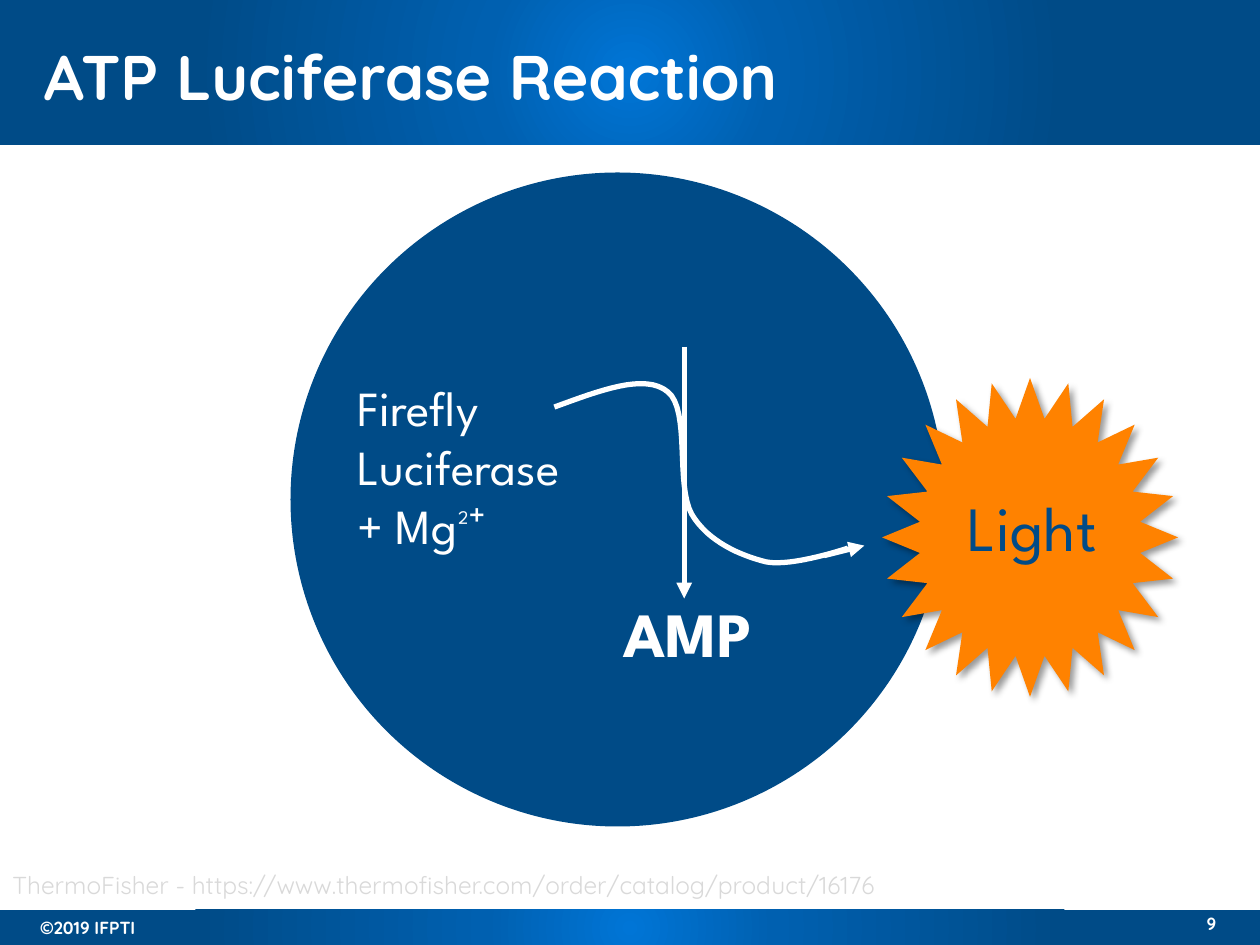
from dataclasses import dataclass

from lxml import etree
from pptx import Presentation
from pptx.dml.color import RGBColor
from pptx.enum import shapes as s, text as t
from pptx.oxml import ns, parse_xml
from pptx.util import Pt


@dataclass(frozen=True)
class Theme:
    """Colours, fonts and type sizes of the slide."""
    navy: str = "004B87"
    white: str = "FFFFFF"
    gray: str = "D9D9D9"
    orange: str = "FF8200"
    glow: tuple = ((0, "0075D6"), (23, "0060B0"), (69, "004B87"), (97, "004B87"))
    sans: str = "Quicksand"
    round: str = "League Spartan"
    tiny: int = 10
    small: int = 14
    body: int = 28
    big: int = 36
    stroke: int = 3


TH = Theme()
NS = f'xmlns:a="{ns.nsuri("a")}"'
CURVE = [
    (150.8, 134), (176.7, 124.6), (202.6, 114.5), (215.6, 125.3),
    (228.6, 135.4), (219.9, 178.6), (229.3, 195.2),
    (238.6, 211), (257.4, 218.9), (271.8, 222.5),
    (286.9, 225.4), (318.6, 214.6), (318.6, 214.6),
]


def rgb(code):
    """Turn a hex code into a colour."""
    return RGBColor.from_string(code)


def write(slide, box, lines, size, color, font, bold=False,
          align=t.PP_ALIGN.LEFT, anchor=t.MSO_ANCHOR.TOP):
    """Add a text box with one paragraph for each line."""
    frame = slide.shapes.add_textbox(*map(Pt, box)).text_frame
    frame.word_wrap = True
    frame.vertical_anchor = anchor
    for i, line in enumerate(lines):
        para = frame.add_paragraph() if i else frame.paragraphs[0]
        para.alignment = align
        run = para.add_run()
        run.text = line
        run.font.size, run.font.name, run.font.bold = Pt(size), font, bold
        run.font.color.rgb = rgb(color)


def solid(slide, kind, box, color):
    """Add a plain preset shape without outline."""
    shape = slide.shapes.add_shape(kind, *map(Pt, box))
    shape.shadow.inherit = False
    shape.fill.solid()
    shape.fill.fore_color.rgb = rgb(color)
    shape.line.fill.background()
    return shape


def band(slide, box):
    """Add a bar with a radial glow."""
    bar = solid(slide, s.MSO_SHAPE.RECTANGLE, box, TH.navy)
    stops = "".join(f'<a:gs pos="{pos * 1000}"><a:srgbClr val="{code}"/></a:gs>'
                    for pos, code in TH.glow)
    grad = parse_xml(
        f'<a:gradFill {NS} rotWithShape="1"><a:gsLst>{stops}</a:gsLst>'
        '<a:path path="circle"><a:fillToRect l="50000" t="50000" r="50000" '
        'b="50000"/></a:path></a:gradFill>')
    props = bar._element.spPr
    props.replace(props.find(ns.qn("a:solidFill")), grad)


def stroke(line):
    """Give a line the white stroke."""
    line.color.rgb = rgb(TH.white)
    line.width = Pt(TH.stroke)


def arrow(slide, start, end):
    """Add a straight arrow."""
    link = slide.shapes.add_connector(
        s.MSO_CONNECTOR.STRAIGHT, *map(Pt, (*start, *end)))
    stroke(link.line)
    etree.SubElement(link.line._get_or_add_ln(), ns.qn("a:tailEnd"), type="triangle")
    etree.SubElement(link._element.spPr, ns.qn("a:effectLst"))


def bend(points, steps=16):
    """Sample a chain of cubic curves."""
    path = [points[0]]
    for i in range(0, len(points) - 1, 3):
        for k in range(1, steps + 1):
            f = k / steps
            parts = ((1 - f) ** 3, 3 * f * (1 - f) ** 2, 3 * f * f * (1 - f), f ** 3)
            path.append(tuple(sum(w * p[axis] for w, p in zip(parts, points[i:i + 4]))
                              for axis in (0, 1)))
    return path


def header(slide, x, y, w, h):
    """Place the title band."""
    band(slide, (x, y, w, h))
    write(slide, (x + 18, y + 9.4, w - 49, 67.7), ["ATP Luciferase Reaction"],
          TH.big, TH.white, TH.sans, True, anchor=t.MSO_ANCHOR.MIDDLE)


def footer(slide, x, y, w, h):
    """Place the bottom band, its notes and the source above it."""
    band(slide, (x, y, w, h))
    write(slide, (x + 15.8, y + 0.7, 96, 19.4), ["©2019 IFPTI"],
          TH.tiny, TH.white, TH.sans, True)
    write(slide, (x + w - 87, y - 1.4, 69, 19.4), ["9"],
          TH.tiny, TH.white, TH.sans, True, t.PP_ALIGN.RIGHT)
    write(slide, (x, y - 25.9, w, 24.5),
          ["ThermoFisher - https://www.thermofisher.com/order/catalog/product/16176"],
          TH.small, TH.gray, TH.sans)


def cell(slide, x, y, w, h):
    """Place the reaction inside its circle."""
    solid(slide, s.MSO_SHAPE.OVAL, (x, y, w, h), TH.navy)
    arrow(slide, (x + 225, y + 99.4), (x + 225, y + 243.4))
    write(slide, (x + 31, y + 113.8, 153.4, 108.7),
          ["Firefly", "Luciferase", "+ Mg²⁺"], TH.body, TH.white, TH.round)
    path = [(Pt(x + px), Pt(y + py)) for px, py in bend(CURVE)]
    pen = slide.shapes.build_freeform(*path[0])
    pen.add_line_segments(path[1:], close=False)
    curve = pen.convert_to_shape()
    curve.shadow.inherit = False
    curve.fill.background()
    stroke(curve.line)
    arrow(slide, (x + 304.9, y + 218.9), (x + 327.9, y + 213.2))
    write(slide, (x + 176, y + 237.6, 102, 51), ["AMP"],
          TH.big, TH.white, TH.round, True, t.PP_ALIGN.CENTER)


def burst(slide, x, y, w, h):
    """Place the star of light."""
    star = solid(slide, s.MSO_SHAPE.STAR_24_POINT, (x, y, w, h), TH.orange)
    glow = parse_xml(
        f'<a:outerShdw {NS} blurRad="{Pt(4)}" dist="{Pt(3)}" dir="2700000" '
        'algn="tl" rotWithShape="0"><a:srgbClr val="000000">'
        '<a:alpha val="40000"/></a:srgbClr></a:outerShdw>')
    star._element.spPr.find(ns.qn("a:effectLst")).append(glow)
    write(slide, (x + 41.8, y + 59.8, 98, 51), ["Light"], TH.big, TH.navy, TH.round)


def main():
    """Build and save the slide."""
    deck = Presentation()
    deck.slide_width, deck.slide_height = Pt(720), Pt(540)
    slide = deck.slides.add_slide(deck.slide_layouts[6])
    header(slide, 0, 0, 720, 82.8)
    footer(slide, 0, 519.8, 720, 20.9)
    cell(slide, 166, 98.6, 373.7, 373.7)
    burst(slide, 504, 216, 169.2, 182.2)
    deck.save("out.pptx")


if __name__ == "__main__":
    main()
